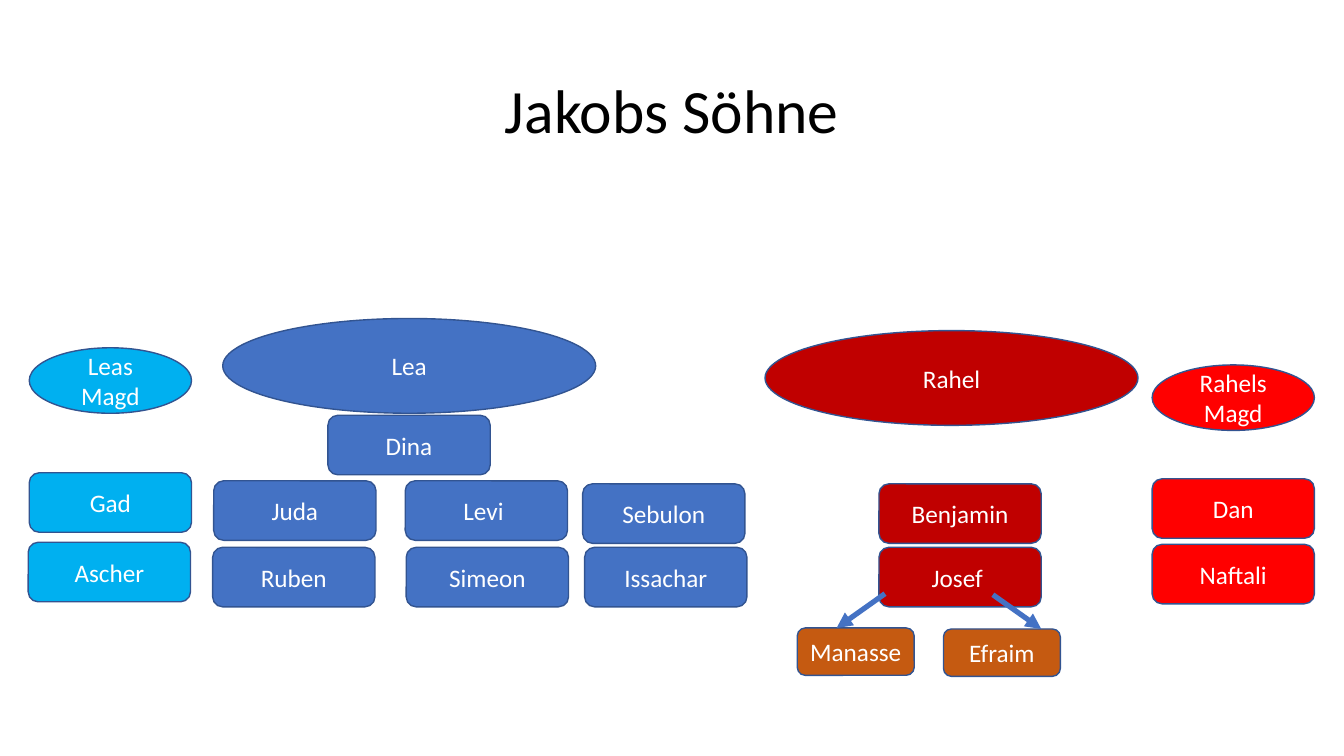
from collections import namedtuple

from lxml.etree import SubElement
from pptx import Presentation
from pptx.dml.color import RGBColor
from pptx.enum.shapes import MSO_CONNECTOR as Connector, MSO_SHAPE as Preset
from pptx.enum.text import MSO_ANCHOR as Anchor, PP_ALIGN as Align
from pptx.oxml.ns import qn
from pptx.util import Inches, Pt

SLIDE_WIDTH, SLIDE_HEIGHT = Inches(13.333), Inches(7.5)
COLUMN, ROW = SLIDE_WIDTH / 40, SLIDE_HEIGHT / 30

BLACK = RGBColor(0x00, 0x00, 0x00)
WHITE = RGBColor(0xFF, 0xFF, 0xFF)
BLUE = RGBColor(0x44, 0x72, 0xC4)
OUTLINE = RGBColor(0x32, 0x54, 0x91)
SKY = RGBColor(0x00, 0xB0, 0xF0)
CRIMSON = RGBColor(0xC0, 0x00, 0x00)
RED = RGBColor(0xFF, 0x00, 0x00)
ORANGE = RGBColor(0xC5, 0x5A, 0x11)

Box = namedtuple("Box", "left top width height")
CHILD_SIZE = (4.83, 2.36)
GRANDCHILD_SIZE = (3.48, 1.88)
WIFE_SIZE = (11.1, 3.76)
MAID_SIZE = (4.83, 2.6)


def place(box):
    return (round(box.left * COLUMN), round(box.top * ROW),
            round(box.width * COLUMN), round(box.height * ROW))


def inside(box, column, row, size):
    return Box(box.left + column, box.top + row, *size)


def write(shape, text, size=18, color=WHITE, spacing=1.0):
    frame = shape.text_frame
    frame.word_wrap = True
    frame.vertical_anchor = Anchor.MIDDLE
    frame.text = text
    for paragraph in frame.paragraphs:
        paragraph.alignment = Align.CENTER
        paragraph.line_spacing = spacing
        font = paragraph.runs[0].font
        font.name, font.size, font.color.rgb = "Calibri", Pt(size), color


def add_person(slide, name, box, color, preset=Preset.ROUNDED_RECTANGLE):
    shape = slide.shapes.add_shape(preset, *place(box))
    shape.shadow.inherit = False
    shape.fill.solid()
    shape.fill.fore_color.rgb = color
    shape.line.color.rgb = OUTLINE
    shape.line.width = Pt(1)
    write(shape, name)


def add_arrow(slide, start, end):
    points = [round(value * unit) for point in (start, end)
              for value, unit in zip(point, (COLUMN, ROW))]
    arrow = slide.shapes.add_connector(Connector.STRAIGHT, *points)
    arrow.line.color.rgb = BLUE
    arrow.line.width = Pt(3.75)
    SubElement(arrow.line._get_or_add_ln(), qn("a:tailEnd"), type="triangle")
    SubElement(arrow._element.spPr, qn("a:effectLst"))


def add_title(slide, text, box):
    write(slide.shapes.add_textbox(*place(box)), text, size=44, color=BLACK, spacing=0.9)


def add_family(slide, mother, box, color, children):
    add_person(slide, mother, box, color, Preset.OVAL)
    for name, column, row in children:
        add_person(slide, name, inside(box, column, row, CHILD_SIZE), color)


def add_sons_of_josef(slide, josef):
    sons = [("Manasse", (-2.43, 3.2), (0.18, 1.84), (-1.26, 3.2)),
            ("Efraim", (1.92, 3.24), (3.39, 1.88), (4.83, 3.24))]
    for name, corner, start, end in sons:
        add_person(slide, name, inside(josef, *corner, GRANDCHILD_SIZE), ORANGE)
        add_arrow(slide, *((josef.left + column, josef.top + row)
                           for column, row in (start, end)))


def main():
    presentation = Presentation()
    presentation.slide_width, presentation.slide_height = SLIDE_WIDTH, SLIDE_HEIGHT
    slide = presentation.slides.add_slide(presentation.slide_layouts[6])

    add_title(slide, "Jakobs Söhne", Box(2.75, 1.6, 34.5, 5.8))
    add_family(slide, "Lea", Box(6.63, 12.64, *WIFE_SIZE), BLUE, [
        ("Dina", 3.13, 3.84),
        ("Juda", -0.27, 6.44), ("Levi ", 5.43, 6.44), ("Sebulon", 10.71, 6.56),
        ("Ruben", -0.3, 9.08), ("Simeon", 5.46, 9.08), ("Issachar", 10.77, 9.08)])
    add_family(slide, "Leas Magd", Box(0.87, 13.8, *MAID_SIZE), SKY, [
        ("Gad", 0, 4.96), ("Ascher", -0.03, 7.72)])
    rahel = Box(22.77, 13.12, *WIFE_SIZE)
    josef = (3.39, 8.6)
    add_family(slide, "Rahel", rahel, CRIMSON, [
        ("Benjamin", 3.39, 6.08), ("Josef ", *josef)])
    add_family(slide, "Rahels\nMagd", Box(34.29, 14.48, *MAID_SIZE), RED, [
        ("Dan", 0, 4.52), ("Naftali", 0, 7.12)])
    add_sons_of_josef(slide, inside(rahel, *josef, CHILD_SIZE))

    presentation.save("out.pptx")


if __name__ == "__main__":
    main()
